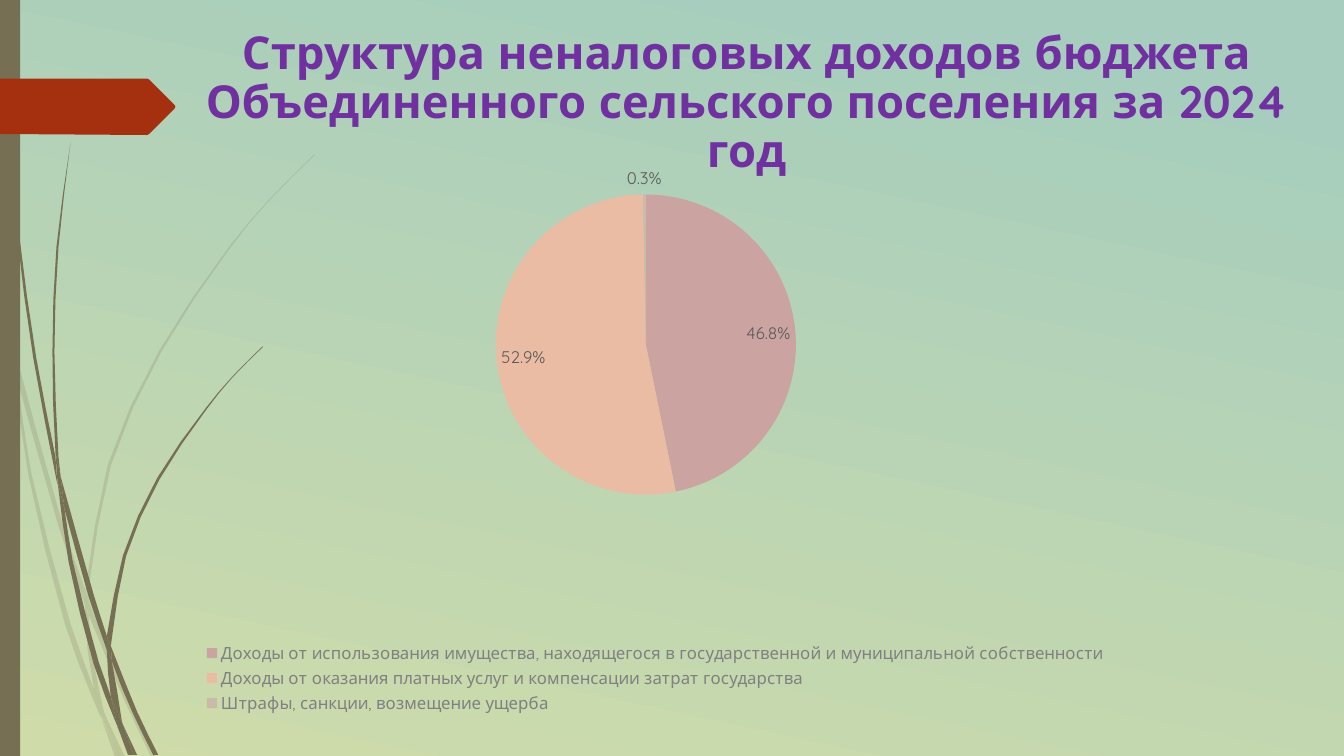
from math import dist

from lxml import etree
from pptx import Presentation
from pptx.chart import data as chart_data
from pptx.dml.color import RGBColor
from pptx.enum import chart as chart_enum, shapes, text
from pptx.oxml import ns
from pptx.util import Inches, Pt

FONT = "Quicksand"
SKY = RGBColor(0xA6, 0xCD, 0xBD)
MEADOW = RGBColor(0xCF, 0xDC, 0xAA)
STEM = RGBColor(0x76, 0x6F, 0x54)
RED = RGBColor(0xA5, 0x30, 0x10)
PURPLE = RGBColor(0x70, 0x30, 0xA0)
LEGEND_GRAY = RGBColor(0x80, 0x80, 0x80)
LABEL_GRAY = RGBColor(0x59, 0x59, 0x59)
BLACK = RGBColor(0, 0, 0)

TITLE = "Структура неналоговых доходов бюджета Объединенного сельского поселения за 2024 год"
INCOME = [
    ("Доходы от использования имущества, находящегося в государственной и муниципальной собственности",
     46.8, RGBColor(0xCB, 0xA3, 0xA0)),
    ("Доходы от оказания платных услуг и компенсации затрат государства",
     52.9, RGBColor(0xEB, 0xBC, 0xA4)),
    ("Штрафы, санкции, возмещение ущерба", 0.3, RGBColor(0xC8, 0xBB, 0xAA)),
]

# Each blade of grass is a list of smooth edges, in inches
PALE_GRASS = [
    [[(.11, 3.5), (.09, 3.22), (0, 2.82)], [(0, 2.99), (.1, 3.44), (.11, 3.5)]],
    [[(.17, 3.76), (.58, 5.22), (.84, 5.99)], [(.85, 5.86), (.62, 5.2), (.14, 3.45)]],
    [[(.88, 6.1), (1.23, 6.94), (1.5, 7.51)], [(1.55, 7.51), (1.27, 6.92), (.92, 6.07), (.88, 5.96)]],
    [[(1.05, 7.11), (1.19, 7.51)], [(1.24, 7.51), (1.05, 7.11)]],
    [[(.11, 3.5), (.28, 4.7), (.65, 6.21), (.92, 6.93), (1.01, 7.14)],
     [(.99, 7.07), (.93, 6.83), (.7, 6.19), (.31, 4.69), (.17, 3.76), (.11, 3.5)]],
    [[(.84, 5.99), (.87, 6.46), (.93, 6.83), (1.05, 7.11)],
     [(1.03, 7.06), (.91, 6.46), (.88, 6.1), (.84, 5.99)]],
    [[(.88, 5.96), (.88, 5.84), (1.1, 4.62), (1.6, 3.49), (2.29, 2.45), (2.68, 1.98), (3.12, 1.54)],
     [(3.12, 1.53), (2.68, 1.97), (2.28, 2.44), (1.58, 3.48), (1.07, 4.61), (.85, 5.84)]],
    [[(1.01, 7.14), (1.14, 7.51)], [(1.19, 7.51), (1.01, 7.14)]],
    [[(.88, 6.1), (.88, 5.96), (.85, 5.86)], [(.84, 5.99), (.88, 6.08)]],
    [[(.93, 6.83), (.99, 7.07), (1.19, 7.51)], [(1.05, 7.11), (.93, 6.83)]],
]
DARK_GRASS = [
    [[(.03, 0), (.07, 1.1), (.17, 2.33), (.33, 3.55), (.57, 4.81)],
     [(.55, 4.53), (.36, 3.55), (.19, 2.32), (.08, 1.09), (.04, 0)]],
    [[(.64, 5.05), (.88, 5.92), (1.06, 6.45)], [(1.06, 6.31), (.93, 5.9), (.6, 4.72)]],
    [[(1.1, 6.41), (1.11, 6.56), (1.32, 7.08), (1.52, 7.49)], [(1.57, 7.49), (1.36, 7.06), (1.1, 6.41)]],
    [[(.57, 4.77), (.68, 5.57), (.93, 6.59), (1.17, 7.22)],
     [(1.16, 7.17), (1.1, 6.91), (.98, 6.57), (.72, 5.56), (.64, 5.05), (.57, 4.77)]],
    [[(.6, 4.72), (.58, 4.53), (.54, 3.49), (.58, 2.45), (.7, 1.41)],
     [(.7, 1.41), (.56, 2.45), (.52, 3.49), (.55, 4.49), (.6, 4.72)]],
    [[(1.22, 7.19), (1.33, 7.49)], [(1.36, 7.49), (1.22, 7.19)]],
    [[(.55, 4.49), (.57, 4.77), (.64, 5.05)], [(.6, 4.72), (.55, 4.49)]],
    [[(1.1, 6.41), (1.11, 6.33), (1.25, 5.52), (1.58, 4.76), (2.05, 4.06), (2.31, 3.74), (2.61, 3.44)],
     [(2.6, 3.44), (2.31, 3.73), (2.04, 4.05), (1.56, 4.74), (1.22, 5.51), (1.06, 6.31)]],
    [[(1.17, 7.22), (1.27, 7.49)], [(1.31, 7.49), (1.17, 7.22)]],
    [[(1.06, 6.45), (1.1, 6.91), (1.22, 7.19)], [(1.21, 7.16), (1.11, 6.56), (1.06, 6.45)]],
    [[(1.06, 6.31), (1.06, 6.45), (1.11, 6.56)], [(1.1, 6.41), (1.06, 6.31)]],
    [[(1.1, 6.91), (1.17, 7.22), (1.3, 7.49)], [(1.33, 7.49), (1.22, 7.19), (1.1, 6.91)]],
]
ARROW = [[(0, .78), (1.46, .78)], [(1.48, .79), (1.73, 1.04)], [(1.74, 1.06), (1.73, 1.08)],
         [(1.48, 1.33), (1.46, 1.34)], [(0, 1.33)]]


def smooth(edge):
    """Add the midpoint of a smooth curve to each long stretch of an edge."""
    tangents = []
    for i in range(len(edge)):
        before, after = edge[max(i - 1, 0)], edge[min(i + 1, len(edge) - 1)]
        length = dist(before, after) or 1
        tangents.append([(b - a) / length for a, b in zip(before, after)])
    points = [edge[0]]
    for i, (start, end) in enumerate(zip(edge, edge[1:])):
        span = dist(start, end)
        if span > .4:
            points.append(tuple((a + b) / 2 + span * (u - v) / 8 for a, b, u, v
                                in zip(start, end, tangents[i], tangents[i + 1])))
        points.append(end)
    return points


def paint(shape, color, alpha=None):
    shape.shadow.inherit = False
    shape.fill.solid()
    shape.fill.fore_color.rgb = color
    shape.line.fill.background()
    if alpha is not None:
        solid = shape.element.spPr.find(ns.qn("a:solidFill"))
        etree.SubElement(solid[0], ns.qn("a:alpha"), val=str(alpha * 1000))


def add_outline(parent, edges, color, alpha=None):
    points = [(Inches(x), Inches(y)) for edge in edges for x, y in smooth(edge)]
    builder = parent.build_freeform(*points[0])
    builder.add_line_segments(points[1:], close=True)
    paint(builder.convert_to_shape(), color, alpha)


def add_grass(slide, blades, alpha=None):
    tuft = slide.shapes.add_group_shape()
    for blade in blades:
        add_outline(tuft.shapes, blade, STEM, alpha)


def set_background(slide):
    fill = slide.background.fill
    fill.gradient()
    fill.gradient_angle = 258
    for stop, color, position in zip(fill.gradient_stops, (SKY, MEADOW), (.1, 1)):
        stop.color.rgb = color
        stop.position = position


def set_font(font, size, color, bold=False):
    for key, value in {"name": FONT, "size": Pt(size), "bold": bold}.items():
        setattr(font, key, value)
    font.color.rgb = color


def set_plot_area(chart, x, y, w, h):
    area = chart.element.find(".//" + ns.qn("c:plotArea"))
    for old in area.findall(ns.qn("c:layout")):
        area.remove(old)
    layout = etree.Element(ns.qn("c:layout"))
    manual = etree.SubElement(layout, ns.qn("c:manualLayout"))
    values = {"layoutTarget": "inner", "xMode": "edge", "yMode": "edge", "x": x, "y": y, "w": w, "h": h}
    for tag, value in values.items():
        etree.SubElement(manual, ns.qn("c:" + tag), val=str(value))
    area.insert(0, layout)


def add_income_pie(slide):
    names, values, colors = zip(*INCOME)
    income = chart_data.CategoryChartData()
    income.categories = names
    income.add_series("Series 1", values)
    pie = slide.shapes.add_chart(chart_enum.XL_CHART_TYPE.PIE, Inches(1.78), Inches(1.36),
                                 Inches(9.45), Inches(5.76), income).chart
    set_font(pie.font, 10, BLACK)
    pie.has_title = False
    pie.has_legend = True
    pie.legend.position = chart_enum.XL_LEGEND_POSITION.BOTTOM
    pie.legend.include_in_layout = False
    set_font(pie.legend.font, 12, LEGEND_GRAY)
    set_plot_area(pie, .065, .099, .849, .517)
    plot = pie.plots[0]
    plot.vary_by_categories = True
    for i, color in enumerate(colors):
        sector = plot.series[0].points[i].format
        sector.fill.solid()
        sector.fill.fore_color.rgb = color
        sector.line.fill.background()
    labels = plot.series[0].data_labels
    label_format = {"show_percentage": True, "show_value": False, "number_format": "0.0%",
                    "number_format_is_linked": False,
                    "position": chart_enum.XL_LABEL_POSITION.BEST_FIT}
    for key, value in label_format.items():
        setattr(labels, key, value)
    set_font(labels.font, 12, LABEL_GRAY)


def format_title(title):
    place = {"left": 1.66, "top": .25, "width": 11.49, "height": 1.3}
    for side, value in place.items():
        setattr(title, side, Inches(value))
    frame = title.text_frame
    frame.text = TITLE
    frame.word_wrap = True
    frame.auto_size = text.MSO_AUTO_SIZE.NONE
    frame.vertical_anchor = text.MSO_ANCHOR.TOP
    line = frame.paragraphs[0]
    line.alignment = text.PP_ALIGN.CENTER
    line.line_spacing = .9
    set_font(line.runs[0].font, 32.4, PURPLE, bold=True)
    # Bring the heading in front of the chart
    title.element.getparent().append(title.element)


def main():
    deck = Presentation()
    deck.slide_width, deck.slide_height = Inches(13.33), Inches(7.5)
    slide = deck.slides.add_slide(deck.slide_layouts[5])
    set_background(slide)
    # Decoration on the left
    add_grass(slide, PALE_GRASS, alpha=20)
    add_grass(slide, DARK_GRASS)
    band = slide.shapes.add_shape(shapes.MSO_SHAPE.RECTANGLE, 0, 0, Inches(.2), Inches(7.5))
    paint(band, STEM)
    add_outline(slide.shapes, ARROW, RED)
    # Content
    add_income_pie(slide)
    format_title(slide.shapes.title)
    deck.save("out.pptx")


if __name__ == "__main__":
    main()
